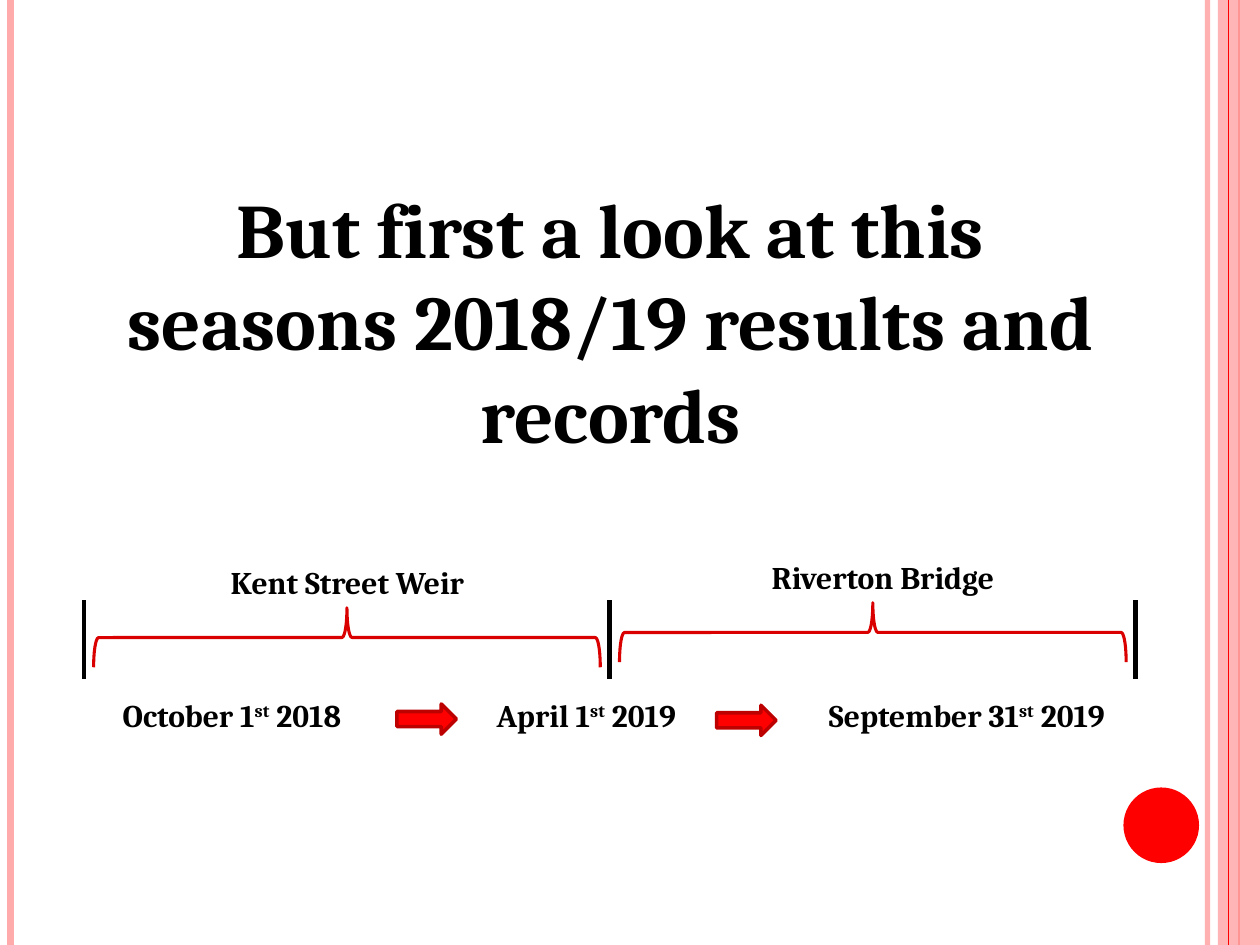
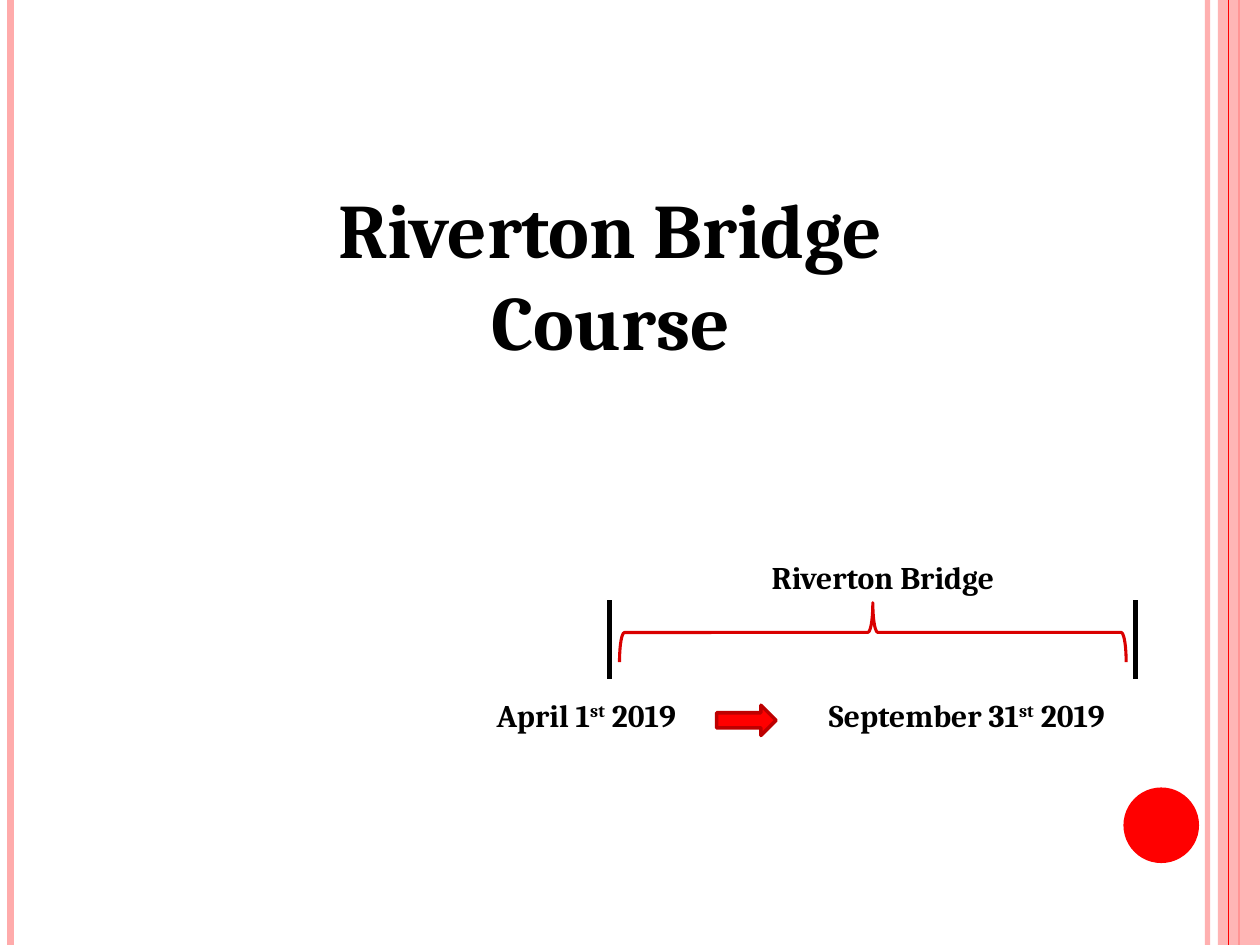
from lxml import etree
from pptx import Presentation
from pptx.dml.color import RGBColor
from pptx.enum.shapes import MSO_CONNECTOR, MSO_SHAPE
from pptx.enum.text import MSO_ANCHOR, MSO_AUTO_SIZE, PP_ALIGN
from pptx.oxml.ns import qn
from pptx.util import Pt

BLACK = RGBColor(0, 0, 0)
RED = RGBColor(0xFF, 0, 0)
PINK = RGBColor(0xFF, 0xAB, 0xAB)
BRACE_RED = RGBColor(0xDA, 0, 0)
ARROW_EDGE = RGBColor(0xBD, 0, 0)
FONT = "Cambria"
WIDTH, HEIGHT = 720, 540

TICKS = [48, 348.5, 649]
TICK_TOP, TICK_HEIGHT = 343, 45
BRACE_DEPTH, BRACE_GAP = 34, 5.5
LABEL_HEIGHT = 29
DATE_TOP = 394

# Brace top, then left and width of the name above it
KENT = ("Kent Street Weir", 347.3, 102, 193)
RIVERTON = ("Riverton Bridge", 344.4, 343, 323)

# Day and month, ordinal, year, then left and width
OCTOBER = ("October 1", "st", " 2018", 36, 193)
APRIL = ("April 1", "st", " 2019", 258, 154)
SEPTEMBER = ("September 31", "st", " 2019", 439, 227)


def set_alpha(fill_parent, percent):
    color = next(fill_parent.iter(qn("a:srgbClr")))
    etree.SubElement(color, qn("a:alpha")).set("val", str(percent * 1000))


def add_vertical(slide, x, top, height, color, width):
    line = slide.shapes.add_connector(
        MSO_CONNECTOR.STRAIGHT, Pt(x), Pt(top), Pt(x), Pt(top + height))
    line.line.color.rgb = color
    line.line.width = Pt(width)
    etree.SubElement(line._element.spPr, qn("a:effectLst"))
    return line


def add_shape(slide, kind, x, y, w, h, fill=None, edge=None, edge_width=1):
    sp = slide.shapes.add_shape(kind, Pt(x), Pt(y), Pt(w), Pt(h))
    sp.shadow.inherit = False
    if fill is None:
        sp.fill.background()
    else:
        sp.fill.solid()
        sp.fill.fore_color.rgb = fill
    if edge is None:
        sp.line.fill.background()
    else:
        sp.line.color.rgb = edge
        sp.line.width = Pt(edge_width)
    return sp


def style_paragraph(p, size):
    p.alignment = PP_ALIGN.CENTER
    p.font.name = FONT
    p.font.size = Pt(size)
    p.font.bold = True
    p.font.color.rgb = BLACK


def add_label(slide, x, y, w, text, ordinal="", rest=""):
    """Add a one-line label; the ordinal is raised."""
    box = slide.shapes.add_textbox(Pt(x), Pt(y), Pt(w), Pt(LABEL_HEIGHT))
    box.text_frame.word_wrap = True
    p = box.text_frame.paragraphs[0]
    p.add_run().text = text
    if ordinal:
        r = p.add_run()
        r.text = ordinal
        r._r.get_or_add_rPr().set("baseline", "30000")
        p.add_run().text = rest
    style_paragraph(p, 18)


def set_title(slide, lines, height):
    title = slide.shapes.title
    title.left, title.top, title.width, title.height = Pt(60), Pt(100), Pt(578), Pt(height)
    tf = title.text_frame
    tf.auto_size = MSO_AUTO_SIZE.NONE
    tf.vertical_anchor = MSO_ANCHOR.TOP
    tf.text = "\n".join(lines)
    for p in tf.paragraphs:
        style_paragraph(p, 44)


def decorate_layout(layout, slide):
    """Draw the side bands and disc on the slide, then move them to its layout."""
    for holder in list(layout.placeholders)[1:]:
        holder._element.getparent().remove(holder._element)
    inner = add_vertical(slide, 690, 0, HEIGHT, PINK, 3)
    set_alpha(inner._element.spPr, 93)
    left = add_vertical(slide, 6, 0, HEIGHT, PINK, 4.5)
    under = add_vertical(slide, 708, 0, HEIGHT, RED, 1.5)
    band = add_shape(slide, MSO_SHAPE.RECTANGLE, 696, 0, WIDTH - 696, HEIGHT, PINK)
    set_alpha(band._element.spPr, 87)
    over = add_vertical(slide, 702, 0, HEIGHT, RED, 0.75)
    disc = add_shape(slide, MSO_SHAPE.OVAL, 642, 450, 43.2, 43.2, RED)
    for sp in (inner, left, under, band, over, disc):
        layout.shapes._spTree.append(sp._element)


def add_course(slide, start, end, course):
    """Bracket the span between two ticks and name the course above it."""
    name, top, label_left, label_width = course
    length = end - start - 2 * BRACE_GAP
    center_x, center_y = (start + end) / 2, top + BRACE_DEPTH / 2
    brace = add_shape(slide, MSO_SHAPE.LEFT_BRACE, center_x - BRACE_DEPTH / 2,
                      center_y - length / 2, BRACE_DEPTH, length,
                      edge=BRACE_RED, edge_width=1.75)
    brace.rotation = 90
    add_label(slide, label_left, top - LABEL_HEIGHT, label_width, name)


def add_timeline(slide, ticks, courses, dates, arrows):
    for (text, ordinal, year, x, w) in dates:
        add_label(slide, x, DATE_TOP, w, text, ordinal, year)
    for x, y in arrows:
        add_shape(slide, MSO_SHAPE.RIGHT_ARROW, x, y, 34, 17.3, RED, ARROW_EDGE, 2)
    for x in ticks:
        add_vertical(slide, x, TICK_TOP, TICK_HEIGHT, BLACK, 2.75)
    for start, end, course in zip(ticks, ticks[1:], courses):
        add_course(slide, start, end, course)


def main():
    prs = Presentation()
    prs.slide_width, prs.slide_height = Pt(WIDTH), Pt(HEIGHT)
    layout = prs.slide_layouts.get_by_name("Title Only")
    season = prs.slides.add_slide(layout)
    decorate_layout(layout, season)
    first_arrow, second_arrow = (226.8, 402.3), (409.5, 403)

    set_title(season, ["But first a look at this seasons 2018/19 results and records"], 167)
    add_timeline(season, TICKS, [KENT, RIVERTON], [OCTOBER, APRIL, SEPTEMBER],
                 [first_arrow, second_arrow])

    riverton = prs.slides.add_slide(layout)
    set_title(riverton, ["Riverton Bridge", "Course"], 114)
    add_timeline(riverton, TICKS[1:], [RIVERTON], [APRIL, SEPTEMBER], [second_arrow])
    prs.save("out.pptx")


if __name__ == "__main__":
    main()
